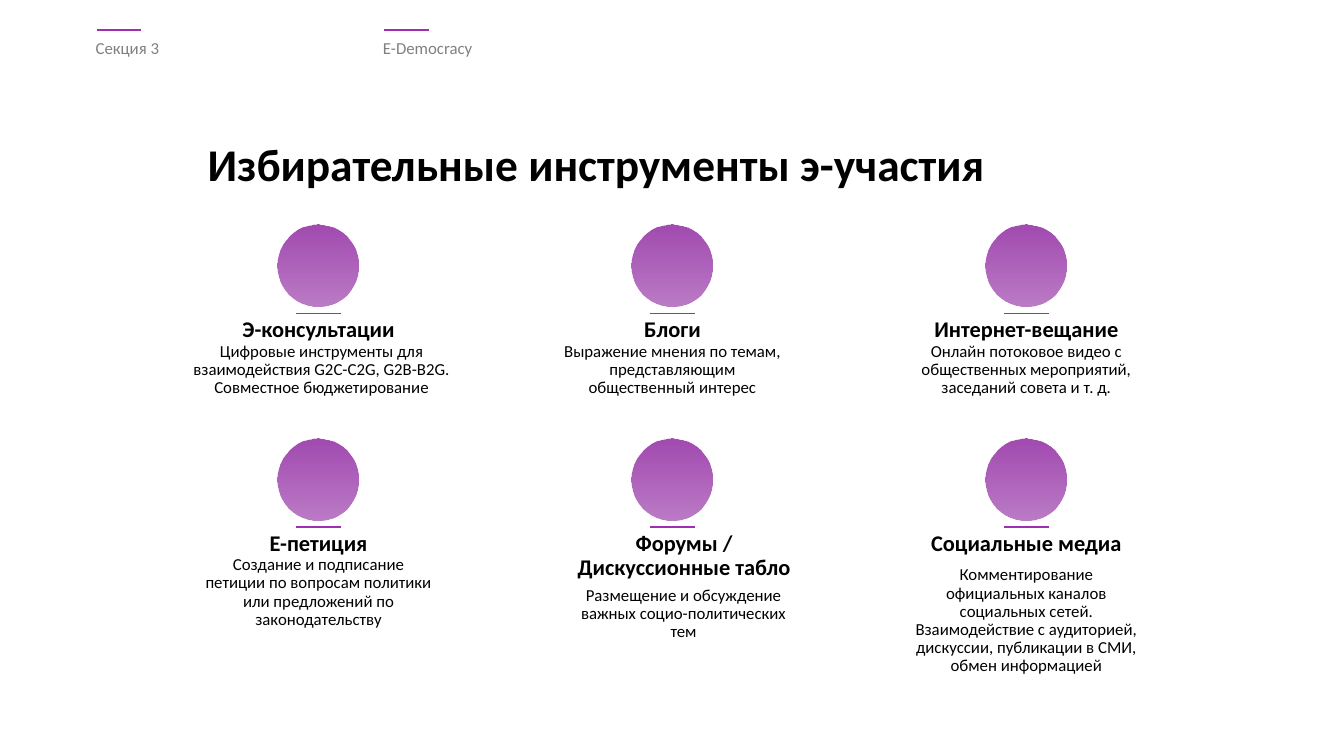
import pptx
import pptx.util
import pptx.dml.color
import pptx.enum.shapes
import pptx.enum.text
import pptx.oxml
import pptx.oxml.ns

RGBColor = pptx.dml.color.RGBColor
ALIGN = pptx.enum.text.PP_ALIGN
BLACK = RGBColor(0x00, 0x00, 0x00)
GREY = RGBColor(0x80, 0x80, 0x80)
ORCHID = RGBColor(0xA2, 0x4A, 0xB1)
PURPLE = RGBColor(0x9F, 0x2E, 0xB2)

PX = 9144
COLUMNS = 3
COLUMN_STEP, ROW_STEP = 351, 212
RULE_WIDTH = 44

TITLE = dict(size=pptx.util.Pt(32.4), bold=True, color=BLACK, align=ALIGN.LEFT)
HEADER = dict(size=pptx.util.Pt(12), bold=False, color=GREY, align=ALIGN.JUSTIFY)
HEADING = dict(size=pptx.util.Pt(16), bold=True, color=BLACK, align=ALIGN.CENTER)
DETAIL = dict(size=pptx.util.Pt(12), bold=False, color=BLACK, align=ALIGN.CENTER)

HEADERS = [(85, "Секция 3"), (370, "E-Democracy")]

# heading, heading width, detail, detail offset x, detail offset y, detail width
TOOLS = [
    ("Э-консультации", 244,
     "Цифровые инструменты для взаимодействия G2C-C2G, G2B-B2G. "
     "Совместное бюджетирование", -16, 0, 282),
    ("Блоги", 244,
     "Выражение мнения по темам, представляющим общественный интерес", 0, 0, 244),
    ("Интернет-вещание", 244,
     "Онлайн потоковое видео с общественных мероприятий, "
     "заседаний совета и т. д.", 0, 0, 244),
    ("E-петиция", 244,
     "Создание и подписание петиции по вопросам политики "
     "или предложений по законодательству", 0, 0, 244),
    ("Форумы / Дискуссионные табло", 267,
     "Размещение и обсуждение важных социо-политических тем", 11, 30, 244),
    ("Социальные медиа", 244,
     "Комментирование официальных каналов социальных сетей. "
     "Взаимодействие с аудиторией, дискуссии, публикации в СМИ, "
     "обмен информацией", 0, 10, 244),
]


def px(*lengths):
    return [pptx.util.Emu(length * PX) for length in lengths]


def write(sp, text, style):
    tf = sp.text_frame
    tf.word_wrap = True
    tf.auto_size = pptx.enum.text.MSO_AUTO_SIZE.NONE
    tf.vertical_anchor = pptx.enum.text.MSO_ANCHOR.TOP
    p = tf.paragraphs[0]
    p.alignment = style["align"]
    p.line_spacing = 0.9
    r = p.add_run()
    r.text = text
    for name, value in dict(name="Calibri", size=style["size"], bold=style["bold"]).items():
        setattr(r.font, name, value)
    r.font.color.rgb = style["color"]


def add_text(s, left, top, width, height, text, style):
    write(s.shapes.add_textbox(*px(left, top, width, height)), text, style)


def add_title(s, left, top, width, height, text):
    sp = s.shapes.title
    sp.left, sp.top, sp.width, sp.height = px(left, top, width, height)
    write(sp, text, TITLE)


def add_rule(s, left, top):
    line = s.shapes.add_connector(
        pptx.enum.shapes.MSO_CONNECTOR.STRAIGHT, *px(left, top, left + RULE_WIDTH, top))
    line.line.color.rgb = PURPLE
    line.line.width = pptx.util.Pt(1.25)
    pptx.oxml.ns.qn("a:effectLst")
    line._element.spPr.append(pptx.oxml.xmlchemy.OxmlElement("a:effectLst"))


def add_circle(s, left, top, size):
    sp = s.shapes.add_shape(
        pptx.enum.shapes.MSO_SHAPE.OVAL, *px(left, top, size, size))
    sp.shadow.inherit = False
    sp.line.fill.background()
    sp.fill.gradient()
    sp.fill.gradient_angle = 270
    for stop in sp.fill.gradient_stops:
        stop.color.rgb = ORCHID
    colors = list(sp._element.spPr.iter(pptx.oxml.ns.qn("a:srgbClr")))
    alpha = pptx.oxml.xmlchemy.OxmlElement("a:alpha")
    alpha.set("val", "72000")
    colors[-1].append(alpha)


def add_tool(s, index, heading, heading_width, detail, dx, dy, detail_width):
    row, column = divmod(index, COLUMNS)
    x, y = column * COLUMN_STEP, row * ROW_STEP
    add_circle(s, 275 + x, 223 + y, 81)
    add_rule(s, 294 + x, 311 + y)
    add_text(s, 194 + x, 311 + y, heading_width, 26, heading, HEADING)
    add_text(s, 194 + x + dx, 335 + y + dy, detail_width, 74, detail, DETAIL)


def main():
    prs = pptx.Presentation()
    prs.slide_width, prs.slide_height = px(1333, 750)
    s = prs.slides.add_slide(prs.slide_layouts[5])
    add_title(s, 196, 136, 800, 61, "Избирательные инструменты э-участия")
    for left, text in HEADERS:
        add_rule(s, left + 11, 30)
        add_text(s, left, 35, 253, 56, text, HEADER)
    for index, tool in enumerate(TOOLS):
        add_tool(s, index, *tool)
    prs.save("out.pptx")


if __name__ == "__main__":
    main()
